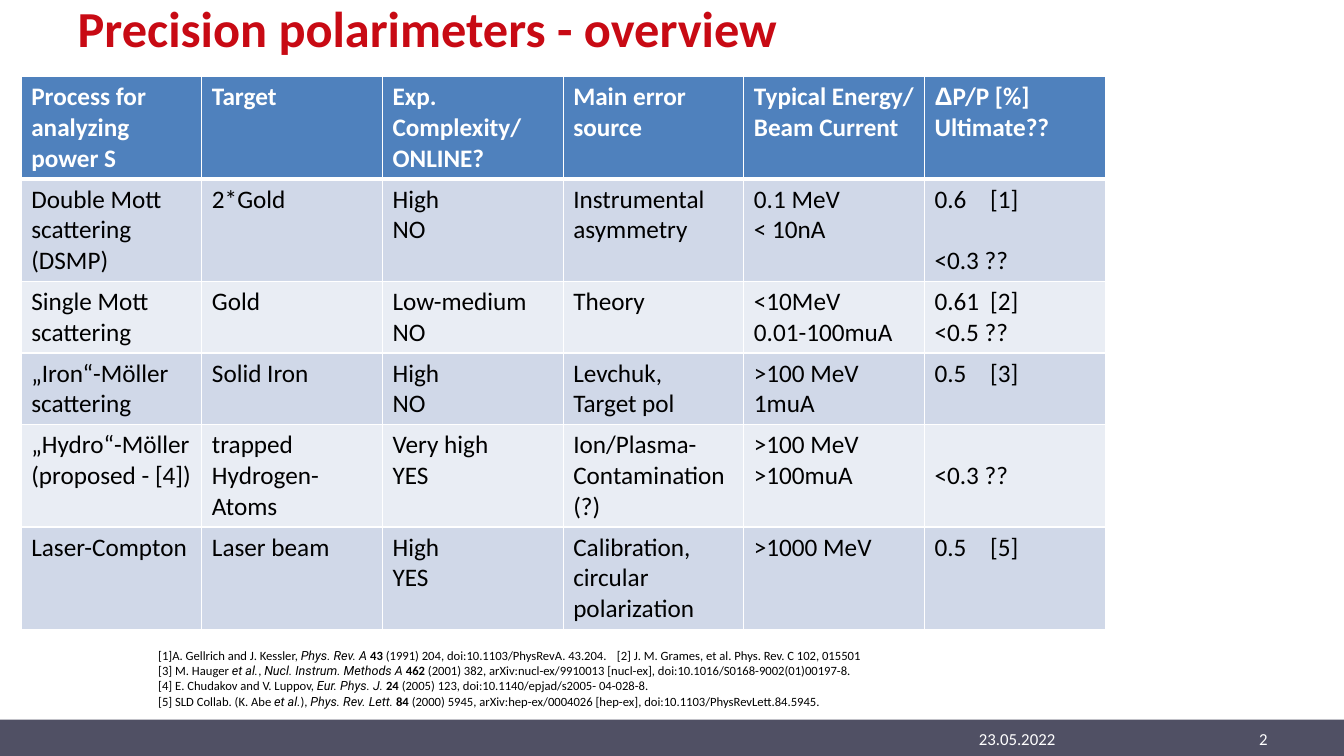
from lxml import etree
from pptx import Presentation
from pptx.dml.color import RGBColor
from pptx.enum.shapes import MSO_SHAPE
from pptx.enum.text import MSO_ANCHOR, MSO_AUTO_SIZE, PP_ALIGN
from pptx.oxml.ns import qn
from pptx.util import Inches, Pt

RECTANGLE = MSO_SHAPE.RECTANGLE
MIDDLE, TOP = MSO_ANCHOR.MIDDLE, MSO_ANCHOR.TOP
LEFT, RIGHT = PP_ALIGN.LEFT, PP_ALIGN.RIGHT
NO_AUTOFIT = MSO_AUTO_SIZE.NONE

SLIDE_WIDTH, SLIDE_HEIGHT = Inches(13.33), Inches(7.5)
TITLE_ONLY = 5
CELL_SIZE, REFERENCE_SIZE, FOOTER_SIZE = 18, 9, 12
LINE_SPACING = 1.22
CELL_MARGIN = Inches(0.05)
COLORS = {
    "title": "C80A14", "footer": "505064", "header": "4F81BD",
    "odd": "D0D8E8", "even": "E9EDF4", "white": "FFFFFF", "black": "000000",
}
RUN_STYLES = {
    "journal": {"name": "Roboto", "italic": True},
    "volume": {"bold": True},
    "greek": {"name": "Arial"},
}

HEADINGS = [
    "Process for analyzing power S", "Target", "Exp. Complexity/\nONLINE?",
    "Main error source", "Typical Energy/\nBeam Current",
    [[("Δ", "greek"), ("P/P [%]", None)], "Ultimate??"],
]
POLARIMETERS = [
    ["Double Mott scattering (DSMP)", "2*Gold", "High\nNO",
     "Instrumental asymmetry", "0.1 MeV\n< 10nA", "0.6\t[1]\n\n<0.3 ??"],
    ["Single Mott\nscattering", "Gold", "Low-medium\nNO", "Theory",
     "<10MeV\n0.01-100muA", "0.61\t[2]\n<0.5 ??"],
    ["„Iron“-Möller\nscattering", "Solid Iron", "High\nNO",
     "Levchuk,\nTarget pol", ">100 MeV\n1muA", "0.5\t[3]"],
    ["„Hydro“-Möller\n(proposed - [4])", "trapped\nHydrogen-Atoms", "Very high\nYES",
     "Ion/Plasma-Contamination\n(?)", ">100 MeV\n>100muA", "\n<0.3 ??"],
    ["Laser-Compton", "Laser beam", "High\nYES",
     "Calibration, circular polarization", ">1000 MeV", "0.5\t[5]"],
]
ROW_LINES = [3, 3, 2, 2, 3, 3]
REFERENCES = [
    [("[1]A. Gellrich and J. Kessler, ", None), ("Phys. Rev. A ", "journal"),
     ("43 ", "volume"),
     ("(1991) 204, doi:10.1103/PhysRevA. 43.204.\t"
      "[2] J. M. Grames, et al. Phys. Rev. C 102, 015501", None)],
    [("[3] M. Hauger ", None), ("et al.", "journal"), (", ", None),
     ("Nucl. Instrum. Methods A ", "journal"), ("462 ", "volume"),
     ("(2001) 382, arXiv:nucl-ex/9910013 [nucl-ex], "
      "doi:10.1016/S0168-9002(01)00197-8.", None)],
    [("[4] E. Chudakov and V. Luppov, ", None), ("Eur. Phys. J. ", "journal"),
     ("24 ", "volume"), ("(2005) 123, doi:10.1140/epjad/s2005- 04-028-8.", None)],
    [("[5] SLD Collab. (K. Abe ", None), ("et al.", "journal"), ("), ", None),
     ("Phys. Rev. Lett. ", "journal"), ("84 ", "volume"),
     ("(2000) 5945, arXiv:hep-ex/0004026 [hep-ex], "
      "doi:10.1103/PhysRevLett.84.5945.", None)],
]


def area(left, top, width, height):
    """Turn percentages of the slide into lengths."""
    return (int(SLIDE_WIDTH * left / 100), int(SLIDE_HEIGHT * top / 100),
            int(SLIDE_WIDTH * width / 100), int(SLIDE_HEIGHT * height / 100))


def line_height(size, lines=1):
    """Return the height of some lines of text."""
    return Pt(size * LINE_SPACING * lines)


def add_tab_stop(paragraph, position):
    """Give a paragraph one left tab stop."""
    stops = etree.SubElement(paragraph._p.get_or_add_pPr(), qn("a:tabLst"))
    etree.SubElement(stops, qn("a:tab"), pos=str(Inches(position)), algn="l")


def write_line(paragraph, pieces, size, color, bold=False, align=LEFT, tab=None):
    """Write one line, either plain or as (text, style) pieces."""
    if isinstance(pieces, str):
        pieces = [(pieces, None)]
    if tab and any("\t" in text for text, _ in pieces):
        add_tab_stop(paragraph, tab)
    paragraph.alignment = align
    font = paragraph.font
    font.name, font.size, font.bold = "Calibri", Pt(size), bold
    font.color.rgb = RGBColor.from_string(COLORS[color])
    for text, style in pieces:
        run = paragraph.add_run()
        run.text = text
        for attribute, value in RUN_STYLES.get(style, {}).items():
            setattr(run.font, attribute, value)


def write_lines(frame, lines, size, color, **options):
    """Write lines into a frame, turning empty ones into spacing."""
    gap, started = 0, False
    for line in lines:
        if not line:
            gap += 1
            continue
        paragraph = frame.add_paragraph() if started else frame.paragraphs[0]
        if gap and started:
            paragraph.space_before = line_height(size, gap)
        write_line(paragraph, line, size, color, **options)
        gap, started = 0, True


def add_panel(slide, place, color):
    """Add a plain filled rectangle."""
    panel = slide.shapes.add_shape(RECTANGLE, *area(*place))
    panel.shadow.inherit = False
    panel.fill.solid()
    panel.fill.fore_color.rgb = RGBColor.from_string(COLORS[color])
    panel.line.fill.background()
    return panel


def add_footer_text(slide, place, text, align=LEFT):
    """Add a small text on the footer band."""
    frame = slide.shapes.add_textbox(*area(*place)).text_frame
    frame.word_wrap = True
    frame.vertical_anchor = MIDDLE
    write_lines(frame, [text], FOOTER_SIZE, "white", align=align)


def add_borders(cell, row):
    """Draw white cell borders, heavier below the header."""
    properties = cell._tc.get_or_add_tcPr()
    widths = {"L": 1, "R": 1, "T": 3 if row == 1 else 1, "B": 3 if row == 0 else 1}
    for position, (side, width) in enumerate(widths.items()):
        border = etree.Element(qn(f"a:ln{side}"), w=str(Pt(width)))
        fill = etree.SubElement(border, qn("a:solidFill"))
        etree.SubElement(fill, qn("a:srgbClr"), val=COLORS["white"])
        properties.insert(position, border)


def fill_cell(cell, row, content):
    """Colour one table cell and write its content."""
    is_header = row == 0
    fill_name = "header" if is_header else "odd" if row % 2 else "even"
    cell.fill.solid()
    cell.fill.fore_color.rgb = RGBColor.from_string(COLORS[fill_name])
    add_borders(cell, row)
    lines = content.split("\n") if isinstance(content, str) else content
    if not lines[0]:
        cell.margin_top = CELL_MARGIN + line_height(CELL_SIZE)
    write_lines(cell.text_frame, lines, CELL_SIZE,
                "white" if is_header else "black", bold=is_header, tab=0.55)


def add_overview(slide):
    """Add the table that compares the polarimeters."""
    rows = [HEADINGS, *POLARIMETERS]
    overview = slide.shapes.add_table(
        len(rows), len(HEADINGS), *area(1.58, 10.13, 80.65, 73)).table
    for row, (contents, lines) in enumerate(zip(rows, ROW_LINES)):
        overview.rows[row].height = line_height(CELL_SIZE, lines) + 2 * CELL_MARGIN
        for column, content in enumerate(contents):
            fill_cell(overview.cell(row, column), row, content)


def add_title(slide, text):
    """Place and format the slide title."""
    title = slide.shapes.title
    title.left, title.top, title.width, title.height = area(5.03, -1.07, 90.02, 9.47)
    frame = title.text_frame
    frame.auto_size = NO_AUTOFIT
    frame.vertical_anchor = MIDDLE
    write_lines(frame, [text], 36, "title", bold=True)


def add_references(slide):
    """Add the list of cited papers."""
    frame = add_panel(slide, (11.03, 85.07, 82.15, 9.47), "white").text_frame
    frame.word_wrap = True
    frame.vertical_anchor = TOP
    write_lines(frame, REFERENCES, REFERENCE_SIZE, "black", tab=4.55)


def main():
    """Build and save the slide."""
    deck = Presentation()
    deck.slide_width, deck.slide_height = SLIDE_WIDTH, SLIDE_HEIGHT
    slide = deck.slides.add_slide(deck.slide_layouts[TITLE_ONLY])
    add_panel(slide, (0, 95.2, 100, 4.8), "footer")
    add_title(slide, "Precision polarimeters - overview")
    add_overview(slide)
    add_footer_text(slide, (72.09, 95.07, 11.03, 5.33), "23.05.2022")
    add_footer_text(slide, (88.6, 95.07, 6.45, 5.33), "2", RIGHT)
    add_references(slide)
    deck.save("out.pptx")


if __name__ == "__main__":
    main()
